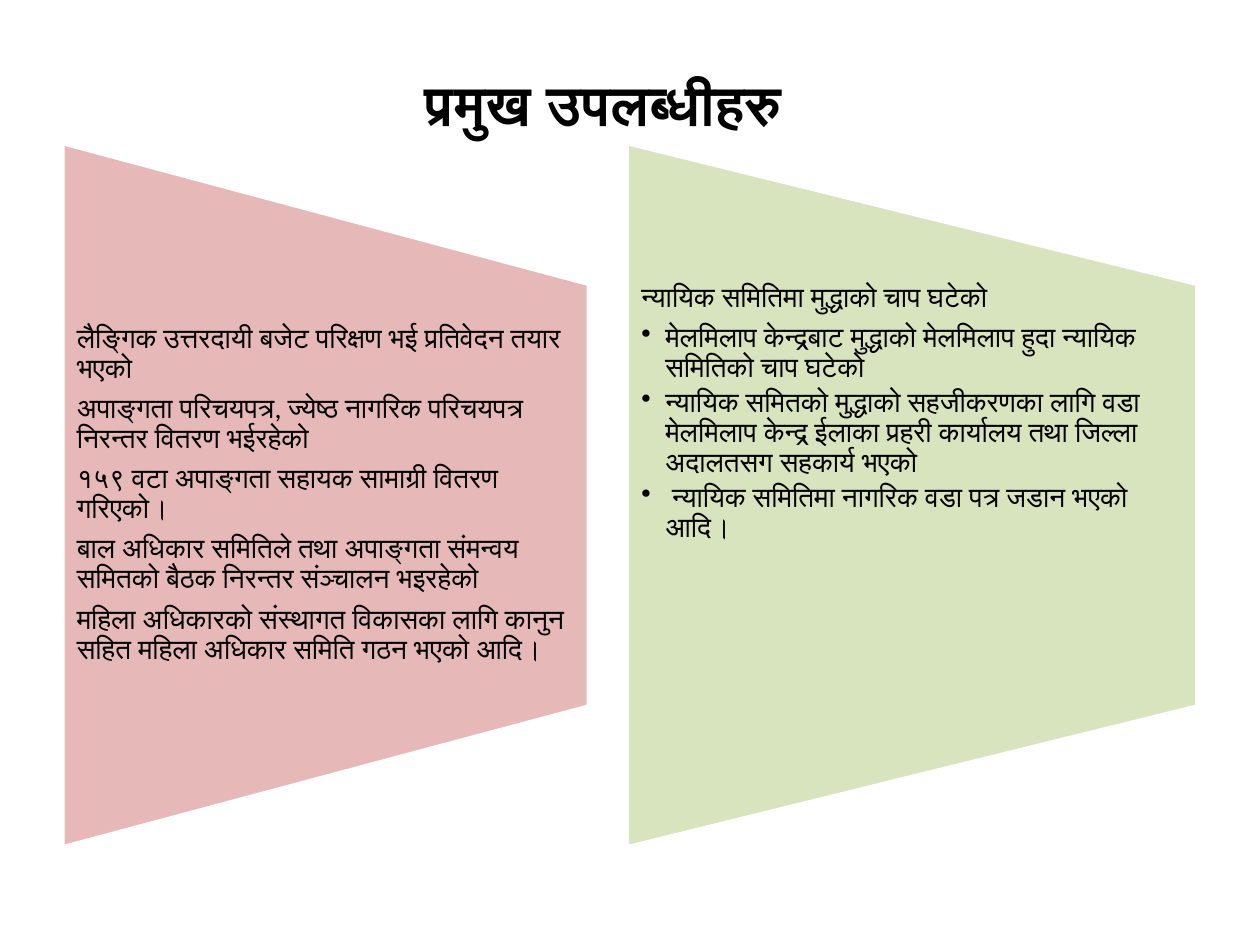
from lxml import etree
from pptx import Presentation
from pptx.dml.color import RGBColor
from pptx.enum.shapes import MSO_SHAPE
from pptx.enum.text import MSO_ANCHOR, MSO_AUTO_SIZE, PP_ALIGN
from pptx.oxml.ns import qn
from pptx.util import Inches, Pt

TRAPEZOID = MSO_SHAPE.FLOWCHART_MANUAL_OPERATION
TOP, MIDDLE = MSO_ANCHOR.TOP, MSO_ANCHOR.MIDDLE
COLORS = {"text": "000000", "line": "FFFFFF", "pink": "E6B9B8", "green": "D7E4BD"}
TITLE_FONT = {"name": "Roboto", "size": Pt(32), "bold": True}
BODY_FONT = {"name": "Calibri", "size": Pt(16), "bold": False}
PANEL_TOP, PANEL_HEIGHT = 1.16, 5.58
TEXT_TOP, TEXT_HEIGHT = 2.25, 3.35

# Each panel: left, width, fill, anchor, plain paragraphs, bulleted paragraphs
PANELS = [
    (0.52, 4.14, "pink", MIDDLE, [
        "लैङ्गिक उत्तरदायी बजेट परिक्षण भई प्रतिवेदन तयार भएको",
        "अपाङ्गता परिचयपत्र, ज्येष्ठ नागरिक परिचयपत्र निरन्तर वितरण भईरहेको",
        "१५९ वटा अपाङ्गता सहायक सामाग्री वितरण गरिएको।",
        "बाल अधिकार समितिले तथा अपाङ्गता संमन्वय समितको बैठक निरन्तर संञ्चालन भइरहेको",
        "महिला अधिकारको संस्थागत विकासका लागि कानुन सहित महिला अधिकार समिति गठन भएको आदि।",
    ], []),
    (4.98, 4.52, "green", TOP, [
        "न्यायिक समितिमा मुद्धाको चाप घटेको",
    ], [
        "मेलमिलाप केन्द्रबाट मुद्धाको मेलमिलाप हुदा न्यायिक समितिको चाप घटेको",
        "न्यायिक समितको मुद्धाको सहजीकरणका लागि वडा मेलमिलाप केन्द्र ईलाका प्रहरी कार्यालय "
        "तथा जिल्ला अदालतसग सहकार्य भएको",
        " न्यायिक समितिमा नागरिक वडा पत्र जडान भएको आदि।",
    ]),
]
PANELS[0] = (0.5, 4.17) + PANELS[0][2:]


def format_font(font, values):
    for name, value in values.items():
        setattr(font, name, value)
    font.color.rgb = RGBColor.from_string(COLORS["text"])


def add_bullet(paragraph):
    paragraph.level = 1
    properties = paragraph._p.get_or_add_pPr()
    properties.set("marL", str(Inches(0.19)))
    properties.set("indent", str(-Inches(0.19)))
    etree.SubElement(properties, qn("a:buChar")).set("char", "•")


presentation = Presentation()
presentation.slide_width, presentation.slide_height = Inches(10), Inches(7.5)
slide = presentation.slides.add_slide(presentation.slide_layouts[5])

# Title
title = slide.shapes.title
title.left, title.top = Inches(1.25), Inches(0.5)
title.width, title.height = Inches(7.08), Inches(0.64)
title.text_frame.text = "प्रमुख उपलब्धीहरु"
title.text_frame.auto_size = MSO_AUTO_SIZE.SHAPE_TO_FIT_TEXT
title.text_frame.vertical_anchor = MIDDLE
title_paragraph = title.text_frame.paragraphs[0]
title_paragraph.alignment = PP_ALIGN.CENTER
format_font(title_paragraph.runs[0].font, TITLE_FONT)

for left, width, fill, anchor, plain, bulleted in PANELS:
    # Trapezoid, turned a quarter about its centre
    panel = slide.shapes.add_shape(
        TRAPEZOID,
        Inches(left + (width - PANEL_HEIGHT) / 2),
        Inches(PANEL_TOP + (PANEL_HEIGHT - width) / 2 - 0.02),
        Inches(PANEL_HEIGHT), Inches(width))
    panel.rotation = 270
    panel.shadow.inherit = False
    panel.fill.solid()
    panel.fill.fore_color.rgb = RGBColor.from_string(COLORS[fill])
    panel.line.color.rgb = RGBColor.from_string(COLORS["line"])
    panel.line.width = Pt(2)

    # Upright text over the trapezoid
    text_box = slide.shapes.add_textbox(
        Inches(left), Inches(TEXT_TOP), Inches(width), Inches(TEXT_HEIGHT))
    frame = text_box.text_frame
    frame.word_wrap = True
    frame.vertical_anchor = anchor
    frame.margin_left = frame.margin_right = Inches(0.11)
    frame.margin_top = frame.margin_bottom = 0
    for index, text in enumerate(plain + bulleted):
        paragraph = frame.paragraphs[0] if index == 0 else frame.add_paragraph()
        is_bullet = index >= len(plain)
        paragraph.line_spacing = 0.9
        paragraph.space_after = Pt(2.4 if is_bullet else 5.6)
        if is_bullet:
            add_bullet(paragraph)
        run = paragraph.add_run()
        run.text = text
        format_font(run.font, BODY_FONT)

presentation.save("out.pptx")
